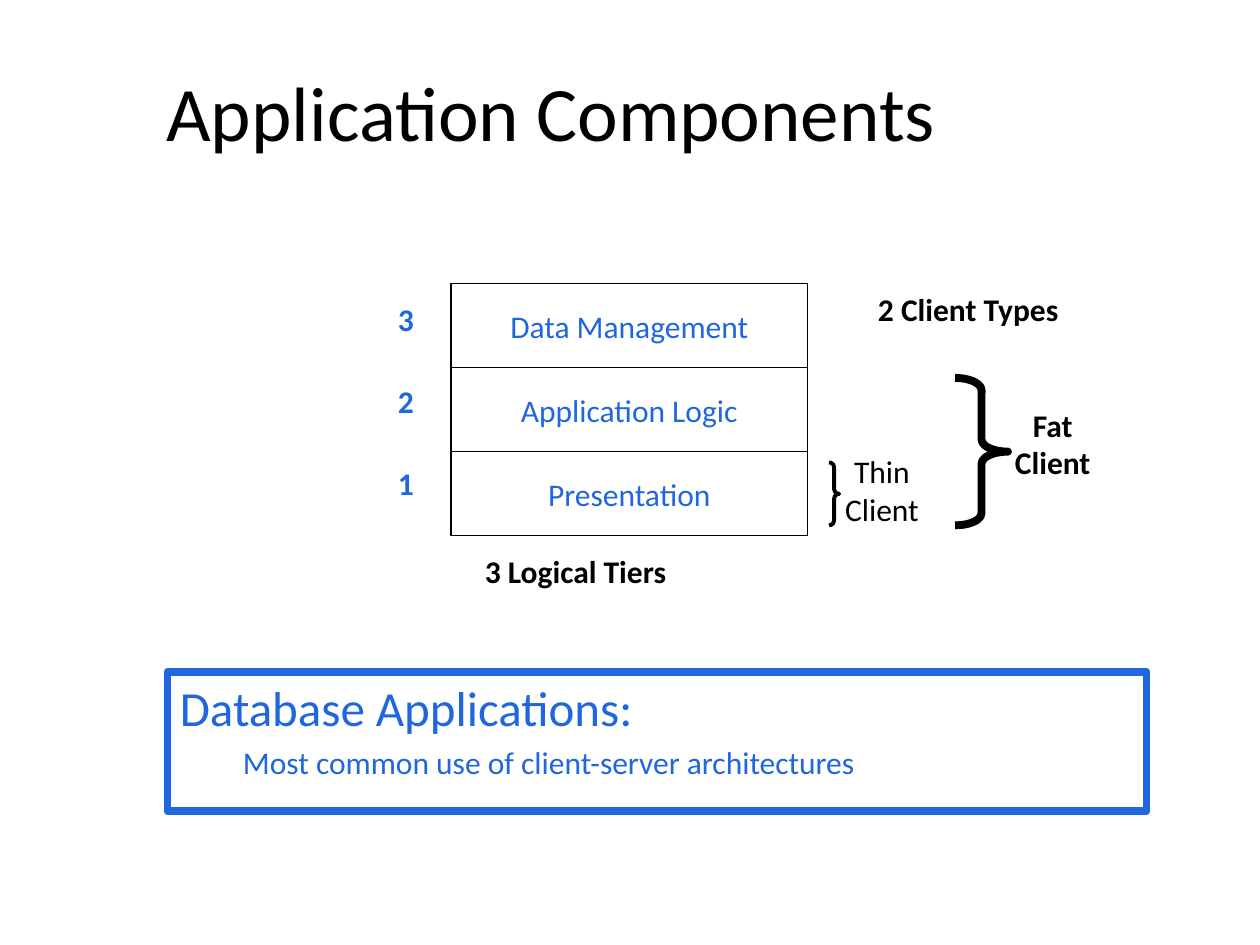
from dataclasses import dataclass

from pptx import Presentation
from pptx import util as u
from pptx.dml.color import RGBColor
from pptx.enum import shapes, text

COLORS = {"ink": "000000", "blue": "2066DF"}
FONT = "Calibri"
MID = text.PP_ALIGN.CENTER
LEFT = text.PP_ALIGN.LEFT


@dataclass
class Box:
    x: float
    y: float
    w: float
    h: float

    def rect(self) -> list:
        return [u.Inches(n) for n in (self.x, self.y, self.w, self.h)]


@dataclass
class Line:
    words: str
    size: float = 18
    color: str = "ink"
    bold: bool = False
    align: int = LEFT
    before: float = 0
    indent: float = 0


@dataclass
class Brace:
    box: Box
    width: float
    curl: float


def write(shape, lines: list, anchor=text.MSO_ANCHOR.TOP, wrap: bool = True) -> None:
    frame = shape.text_frame
    frame.word_wrap = wrap
    frame.vertical_anchor = anchor
    for i, line in enumerate(lines):
        para = frame.paragraphs[0] if i == 0 else frame.add_paragraph()
        para.alignment = line.align
        para.space_before = u.Pt(line.before)
        if line.indent:
            para.level = 1
            props = para._p.get_or_add_pPr()
            props.set("marL", str(u.Inches(line.indent)))
            props.set("indent", "0")
        run = para.add_run()
        run.text = line.words
        style = {"name": FONT, "size": u.Pt(line.size), "bold": line.bold}
        for key, value in style.items():
            setattr(run.font, key, value)
        run.font.color.rgb = RGBColor.from_string(COLORS[line.color])


def label(slide, box: Box, lines: list, anchor=text.MSO_ANCHOR.TOP) -> None:
    write(slide.shapes.add_textbox(*box.rect()), lines, anchor)


def outline(slide, kind, box: Box, color: str, width: float):
    """Add an unfilled preset shape with a solid border."""
    shape = slide.shapes.add_shape(kind, *box.rect())
    shape.shadow.inherit = False
    shape.fill.background()
    shape.line.color.rgb = RGBColor.from_string(COLORS[color])
    shape.line.width = u.Pt(width)
    return shape


def tiers(slide) -> None:
    """Stack the three tiers and number them from the bottom up."""
    names = ["Data Management", "Application Logic", "Presentation"]
    step = 2 / 3
    for i, name in enumerate(names):
        box = Box(3.58, 2.25 + i * step, 2.83, step)
        shape = outline(slide, shapes.MSO_SHAPE.RECTANGLE, box, "ink", 0.75)
        write(shape, [Line(name, color="blue", align=MID)],
              text.MSO_ANCHOR.MIDDLE, wrap=False)
        label(slide, Box(3.06, 2.33 + i * 0.65, 0.39, 0.5),
              [Line(str(len(names) - i), color="blue", bold=True)])


def clients(slide) -> None:
    braces = [
        Brace(Box(7.58, 3, 0.42, 1.17), 4.5, 0.23),
        Brace(Box(6.58, 3.67, 0.08, 0.5), 2.25, 0.5),
    ]
    for brace in braces:
        shape = outline(slide, shapes.MSO_SHAPE.RIGHT_BRACE, brace.box,
                        "ink", brace.width)
        shape.adjustments[0] = brace.curl
        shape.adjustments[1] = 0.5
    kinds = [
        ("Thin", Box(6.58, 3.54, 0.84, 0.7), False),
        ("Fat", Box(7.79, 3.17, 1.13, 0.9), True),
    ]
    for kind, box, bold in kinds:
        label(slide, box, [Line(word, bold=bold, align=MID)
                           for word in (kind, "Client")])


def main() -> None:
    deck = Presentation()
    deck.slide_width, deck.slide_height = u.Inches(10), u.Inches(7.5)
    slide = deck.slides.add_slide(deck.slide_layouts[6])

    label(slide, Box(0.75, 0.25, 7.25, 1.25),
          [Line("Application Components", 44, align=MID)],
          text.MSO_ANCHOR.MIDDLE)
    tiers(slide)
    clients(slide)
    label(slide, Box(3.75, 4.33, 2.53, 0.5), [Line("3 Logical Tiers", bold=True)])
    label(slide, Box(6.87, 2.25, 2.46, 0.5), [Line("2 Client Types", bold=True)])

    note = outline(slide, shapes.MSO_SHAPE.RECTANGLE,
                   Box(1.33, 5.33, 7.77, 1.11), "blue", 4.5)
    write(note, [
        Line("Database Applications:", 28, "blue", before=5.6),
        Line("Most common use of client-server architectures",
             color="blue", before=3.6, indent=0.5),
    ])
    deck.save("out.pptx")


if __name__ == "__main__":
    main()
